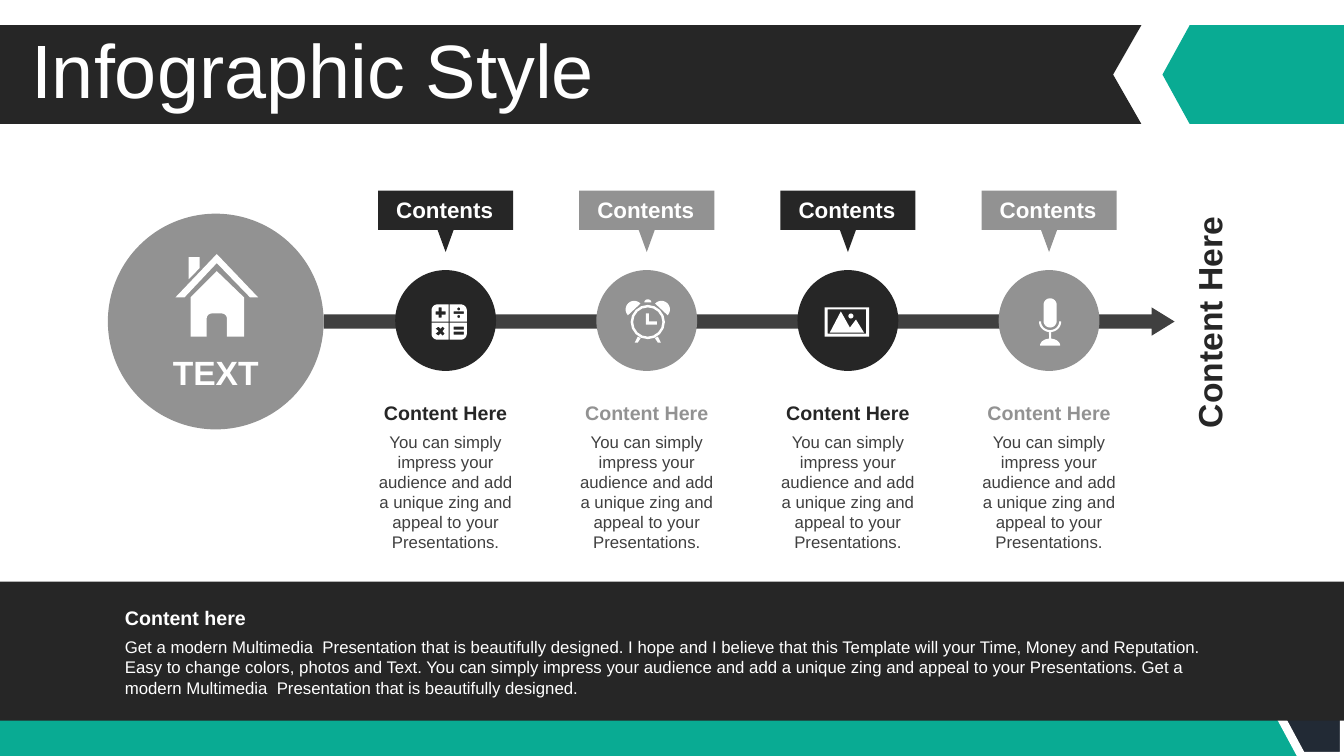
from math import cos, radians, sin

from pptx import Presentation
from pptx.dml.color import RGBColor
from pptx.enum.shapes import MSO_SHAPE
from pptx.enum.text import MSO_ANCHOR, PP_ALIGN
from pptx.util import Inches, Pt

WHITE = RGBColor(0xFF, 0xFF, 0xFF)
BLACK = RGBColor(0x26, 0x26, 0x26)
CHARCOAL = RGBColor(0x40, 0x40, 0x40)
GRAY = RGBColor(0x92, 0x92, 0x92)
TEAL = RGBColor(0x09, 0xAB, 0x93)
NAVY = RGBColor(0x22, 0x2A, 0x35)

STEP_TEXT = "You can simply impress your audience and add a unique zing and appeal to your Presentations."
FOOTER_TEXT = (
    "Get a modern Multimedia  Presentation that is beautifully designed. "
    "I hope and I believe that this Template will your Time, Money and Reputation. "
    "Easy to change colors, photos and Text. You can simply impress your audience "
    "and add a unique zing and appeal to your Presentations. "
    "Get a modern Multimedia  Presentation that is beautifully designed."
)


def arc(x, y, across, down, start, end):
    """Return points along an elliptical arc, clockwise for a rising angle."""
    turns = [radians(start + (end - start) * step / 16) for step in range(17)]
    return [(x + across * cos(turn), y + down * sin(turn)) for turn in turns]


def block(left, top, right, bottom):
    """Return the corners of a rectangle."""
    return [(left, top), (right, top), (right, bottom), (left, bottom)]


HOUSE = [
    [(41, 17), (68, 43), (68, 82), (51, 82)]
    + arc(46, 64, 5, 5, 0, -90) + arc(36, 64, 5, 5, -90, -180)
    + [(31, 82), (15, 82), (15, 43)],
    [(13, 3), (24, 3), (24, 14), (13, 25)],
    [(41, 0), (82, 43), (74, 43), (41, 9), (9, 43), (0, 43)],
]
CALCULATOR = [
    arc(6, 6, 6, 6, 180, 270) + [(17, 0), (17, 17), (0, 17)],
    [(18, 0)] + arc(29, 6, 6, 6, 270, 360) + [(35, 17), (18, 17)],
    [(18, 18), (35, 18)] + arc(29, 29, 6, 6, 0, 90) + [(18, 35)],
    [(0, 18), (17, 18), (17, 35)] + arc(6, 29, 6, 6, 90, 180),
    [(7, 3), (10, 3), (10, 7), (14, 7), (14, 10), (10, 10),
     (10, 13), (7, 13), (7, 10), (4, 10), (4, 7), (7, 7)],
    block(22, 7, 32, 9.5),
    arc(27, 4.5, 1.5, 1.5, 0, 360),
    arc(27, 12, 1.5, 1.5, 0, 360),
    block(22, 22, 32, 25),
    block(22, 27, 32, 30),
    [(7, 22), (4, 24), (7, 26.5), (4, 29), (7, 31), (9, 29),
     (11, 31), (13, 29), (11, 26.5), (13, 24), (11, 22), (9, 24)],
]
CLOCK = [
    arc(22, 22.5, 17, 17, 0, 360),
    arc(22, 22.5, 14.5, 14.5, 0, 360),
    [(20, 14), (23, 14), (23, 22), (31, 22), (31, 25), (20, 25)],
    [(12, 37), (15, 38.5), (12, 43), (9, 43)],
    [(32, 37), (29, 38.5), (32, 43), (35, 43)],
    arc(8.5, 10, 8.5, 8.5, 137, 317),
    arc(35.5, 10, 8.5, 8.5, 223, 403),
    arc(22, 3, 3.5, 3, 180, 360),
]
LANDSCAPE = [
    block(0, 0, 44, 29),
    block(3, 2, 41, 26),
    [(16, 4), (25, 20), (31, 12), (39, 25), (5, 25)],
    arc(26, 8.5, 2.5, 2.5, 0, 360),
]
MICROPHONE = [
    arc(11, 6.5, 6.5, 6.5, 180, 360) + arc(11, 22.5, 6.5, 6.5, 0, 180),
    arc(11, 23, 11, 10.5, 0, 84) + [(12, 40)] + arc(11, 47, 10, 7, -84, 0)
    + arc(11, 47, 10, 7, 180, 264) + [(10, 40)] + arc(11, 23, 11, 10.5, 96, 180)
    + arc(11, 23, 9, 8.5, 180, 0),
]
STEPS = [
    (BLACK, CALCULATOR, -0.14, -0.16),
    (GRAY, CLOCK, -0.21, -0.21),
    (BLACK, LANDSCAPE, -0.23, -0.13),
    (GRAY, MICROPHONE, -0.1, -0.22),
]


def paint(shape, color):
    """Give a shape a plain fill without line or shadow."""
    shape.shadow.inherit = False
    shape.fill.solid()
    shape.fill.fore_color.rgb = color
    shape.line.fill.background()
    return shape


def add_preset(page, kind, left, top, width, height, color):
    """Add a plain preset shape."""
    box = (Inches(length) for length in (left, top, width, height))
    return paint(page.shapes.add_shape(kind, *box), color)


def add_outline(page, left, top, contours, color, unit=1):
    """Add one filled freeform whose contours are measured from left and top."""
    placed = [[(Inches(left + x * unit), Inches(top + y * unit)) for x, y in contour]
              for contour in contours]
    builder = page.shapes.build_freeform(*placed[0][0])
    for contour in placed:
        builder.move_to(*contour[0])
        builder.add_line_segments(contour[1:], close=True)
    return paint(builder.convert_to_shape(), color)


def add_text(page, left, top, width, height, text, size, color, bold=False,
             align=PP_ALIGN.CENTER, anchor=MSO_ANCHOR.MIDDLE):
    """Add a wrapped text box in one style."""
    box = page.shapes.add_textbox(Inches(left), Inches(top), Inches(width), Inches(height))
    frame = box.text_frame
    frame.word_wrap = True
    frame.vertical_anchor = anchor
    frame.text = text
    para = frame.paragraphs[0]
    para.alignment = align
    font = para.runs[0].font
    font.name, font.size, font.bold, font.color.rgb = "Arial", Pt(size), bold, color
    return box


def add_header(page, top, height):
    """Draw the title ribbon and its teal tail."""
    middle = height / 2
    ribbon = [(0, 0), (11.32, 0), (11.04, middle), (11.32, height), (0, height)]
    tail = [(0.27, 0), (1.8, 0), (1.8, height), (0.27, height), (0, middle)]
    add_outline(page, 0, top, [ribbon], BLACK)
    add_outline(page, 11.53, top, [tail], TEAL)
    title = add_text(page, 0.21, top + 0.09, 10.53, 0.79, "Infographic Style", 54, WHITE,
                     align=PP_ALIGN.LEFT)
    title.text_frame.paragraphs[0].line_spacing = 0.9


def add_base(page, top):
    """Draw the teal strip and the navy corner."""
    add_preset(page, MSO_SHAPE.RECTANGLE, 0, top, 13.33, 0.4, TEAL)
    points = [(0.63, 0), (0.63, 0.82), (0.21, 0.82), (0, 0.43), (0.24, 0)]
    corner = add_outline(page, 12.7, top - 0.42, [points], NAVY)
    corner.line.color.rgb = WHITE
    corner.line.width = Pt(6)


def add_start(page, left, top, size):
    """Draw the large house circle, the arrow and the sideways label."""
    arrow = add_preset(page, MSO_SHAPE.RIGHT_ARROW, left + size, top + 0.93, 8.44, 0.28, CHARCOAL)
    arrow.adjustments[1] = 0.81
    add_preset(page, MSO_SHAPE.OVAL, left, top, size, size, GRAY)
    add_outline(page, left + 0.67, top + 0.4, [*HOUSE], WHITE, 0.01)
    add_text(page, left + 0.52, top + 1.32, 1.1, 0.5, "TEXT", 24, WHITE, True)
    label = add_text(page, 10.82, top + 0.83, 2.34, 0.5, "Content Here", 24, BLACK, True)
    label.rotation = 270


def add_step(page, center, top, color, icon, icon_x, icon_y):
    """Draw one step: callout, icon circle, heading and text."""
    callout = [(-0.67, 0), (0.67, 0), (0.67, 0.39), (0.08, 0.39),
               (0, 0.61), (-0.08, 0.39), (-0.67, 0.39)]
    add_outline(page, center, top, [callout], color)
    add_text(page, center - 0.67, top, 1.32, 0.37, "Contents", 16, WHITE, True)
    add_preset(page, MSO_SHAPE.OVAL, center - 0.5, top + 0.79, 1, 1, color)
    add_outline(page, center + icon_x, top + 1.29 + icon_y, icon, WHITE, 0.01)
    add_text(page, center - 0.79, top + 2.03, 1.58, 0.34, "Content Here", 14, color, True)
    add_text(page, center - 0.79, top + 2.34, 1.58, 1.31, STEP_TEXT, 12, CHARCOAL,
             anchor=MSO_ANCHOR.TOP)


def add_footer(page, top, height):
    """Draw the dark band with its heading and text."""
    add_preset(page, MSO_SHAPE.RECTANGLE, 0, top, 13.33, height, BLACK)
    add_text(page, 1.14, top + 0.19, 11.18, 0.34, "Content here", 14, WHITE, True, PP_ALIGN.LEFT)
    add_text(page, 1.14, top + 0.5, 11.18, 0.71, FOOTER_TEXT, 12, WHITE,
             align=PP_ALIGN.LEFT, anchor=MSO_ANCHOR.TOP)


def main():
    """Build the slide and save it."""
    deck = Presentation()
    deck.slide_width, deck.slide_height = Inches(13.33), Inches(7.5)
    page = deck.slides.add_slide(deck.slide_layouts[6])
    add_header(page, 0.25, 0.98)
    add_base(page, 7.1)
    add_start(page, 1.07, 2.12, 2.14)
    for index, step in enumerate(STEPS):
        add_step(page, 4.42 + index * 1.995, 1.89, *step)
    add_footer(page, 5.77, 1.38)
    deck.save("out.pptx")


if __name__ == "__main__":
    main()
